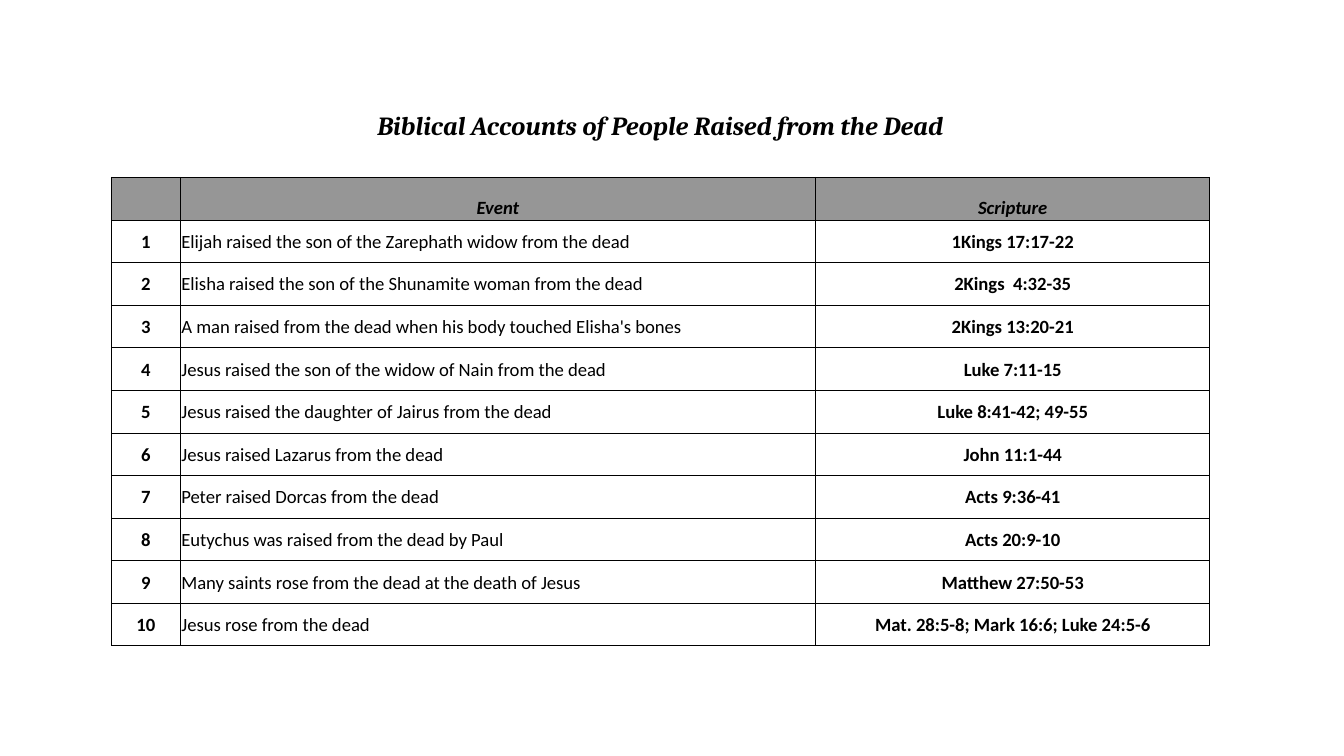
import lxml.etree
import pptx
import pptx.dml.color
import pptx.enum.text
import pptx.oxml.ns
import pptx.util

Inches = pptx.util.Inches
qn = pptx.oxml.ns.qn
ALIGN = pptx.enum.text.PP_ALIGN
ANCHOR = pptx.enum.text.MSO_ANCHOR

TITLE = "Biblical Accounts of People Raised from the Dead"
HEADINGS = ("", "Event", "Scripture")
ACCOUNTS = [
    ("Elijah raised the son of the Zarephath widow from the dead", "1Kings 17:17-22"),
    ("Elisha raised the son of the Shunamite woman from the dead", "2Kings  4:32-35"),
    ("A man raised from the dead when his body touched Elisha's bones", "2Kings 13:20-21"),
    ("Jesus raised the son of the widow of Nain from the dead", "Luke 7:11-15"),
    ("Jesus raised the daughter of Jairus from the dead", "Luke 8:41-42; 49-55"),
    ("Jesus raised Lazarus from the dead", "John 11:1-44"),
    ("Peter raised Dorcas from the dead", "Acts 9:36-41"),
    ("Eutychus was raised from the dead by Paul", "Acts 20:9-10"),
    ("Many saints rose from the dead at the death of Jesus", "Matthew 27:50-53"),
    ("Jesus rose from the dead", "Mat. 28:5-8; Mark 16:6; Luke 24:5-6"),
]

THEME = {
    "ink": "000000", "header": "969696",
    "title_font": "Cambria", "body_font": "Calibri",
    "title_size": 14, "body_size": 10, "line": 0.5,
}
SLIDE_WIDTH = 10
SLIDE_HEIGHT = SLIDE_WIDTH * 9 / 16
LEFT, TOP = 0.83, 0.65
COLUMNS = (0.51, 4.73, 2.93)
TITLE_HEIGHT, SPACER_HEIGHT, GRID_HEIGHT = 0.41, 0.26, 3.49
TITLE_ROW, SPACER_ROW, HEADER_ROW, FIRST_ROW = range(4)
ROW_COUNT = FIRST_ROW + len(ACCOUNTS)


def set_borders(cell, sides):
    """Rule the named sides (letters from LRTB) and clear the others."""
    properties = cell._tc.get_or_add_tcPr()
    for side in "LRTB":
        line = lxml.etree.SubElement(properties, qn(f"a:ln{side}"))
        if side in sides:
            line.set("w", str(pptx.util.Pt(THEME["line"])))
            fill = lxml.etree.SubElement(line, qn("a:solidFill"))
            lxml.etree.SubElement(fill, qn("a:srgbClr"), val=THEME["ink"])
        else:
            lxml.etree.SubElement(line, qn("a:noFill"))


def write_cell(cell, text, font="body_font", size="body_size", bold=True, italic=False,
               align=ALIGN.CENTER, anchor=ANCHOR.MIDDLE, borders="LRTB", fill=None):
    cell.margin_left = cell.margin_right = cell.margin_top = Inches(0.01)
    cell.margin_bottom = 0
    cell.vertical_anchor = anchor
    set_borders(cell, borders)
    if fill:
        cell.fill.solid()
        cell.fill.fore_color.rgb = pptx.dml.color.RGBColor.from_string(THEME[fill])
    else:
        cell.fill.background()
    para = cell.text_frame.paragraphs[0]
    para.alignment = align
    if not text:
        # Keeps an empty cell from stretching its row.
        lxml.etree.SubElement(para._p, qn("a:endParaRPr"), sz=str(THEME[size] * 100))
        return
    span = para.add_run()
    span.text = text
    span.font.name = THEME[font]
    span.font.size = pptx.util.Pt(THEME[size])
    span.font.bold, span.font.italic = bold, italic
    span.font.color.rgb = pptx.dml.color.RGBColor.from_string(THEME["ink"])


def add_accounts_table(page):
    table = page.shapes.add_table(
        ROW_COUNT, len(COLUMNS), Inches(LEFT), Inches(TOP), Inches(sum(COLUMNS)),
        Inches(TITLE_HEIGHT + SPACER_HEIGHT + GRID_HEIGHT)).table
    table.first_row = table.horz_banding = False
    for column, width in zip(table.columns, COLUMNS):
        column.width = Inches(width)
    grid_rows = ROW_COUNT - HEADER_ROW
    heights = [TITLE_HEIGHT, SPACER_HEIGHT] + [GRID_HEIGHT / grid_rows] * grid_rows
    for row, height in zip(table.rows, heights):
        row.height = Inches(height)

    for index, heading in enumerate(HEADINGS):
        write_cell(table.cell(TITLE_ROW, index), "" if index else TITLE,
                   font="title_font", size="title_size", italic=True,
                   anchor=ANCHOR.BOTTOM, borders="")
        write_cell(table.cell(SPACER_ROW, index), "", borders="B")
        write_cell(table.cell(HEADER_ROW, index), heading, italic=True,
                   anchor=ANCHOR.BOTTOM, fill="header")
    table.cell(TITLE_ROW, 0).merge(table.cell(TITLE_ROW, len(COLUMNS) - 1))

    for number, (event, scripture) in enumerate(ACCOUNTS, start=1):
        row = HEADER_ROW + number
        write_cell(table.cell(row, 0), str(number))
        write_cell(table.cell(row, 1), event, bold=False, align=ALIGN.LEFT)
        write_cell(table.cell(row, 2), scripture)


def main():
    deck = pptx.Presentation()
    deck.slide_width, deck.slide_height = Inches(SLIDE_WIDTH), Inches(SLIDE_HEIGHT)
    page = deck.slides.add_slide(deck.slide_layouts[6])
    add_accounts_table(page)
    deck.save("out.pptx")


if __name__ == "__main__":
    main()
